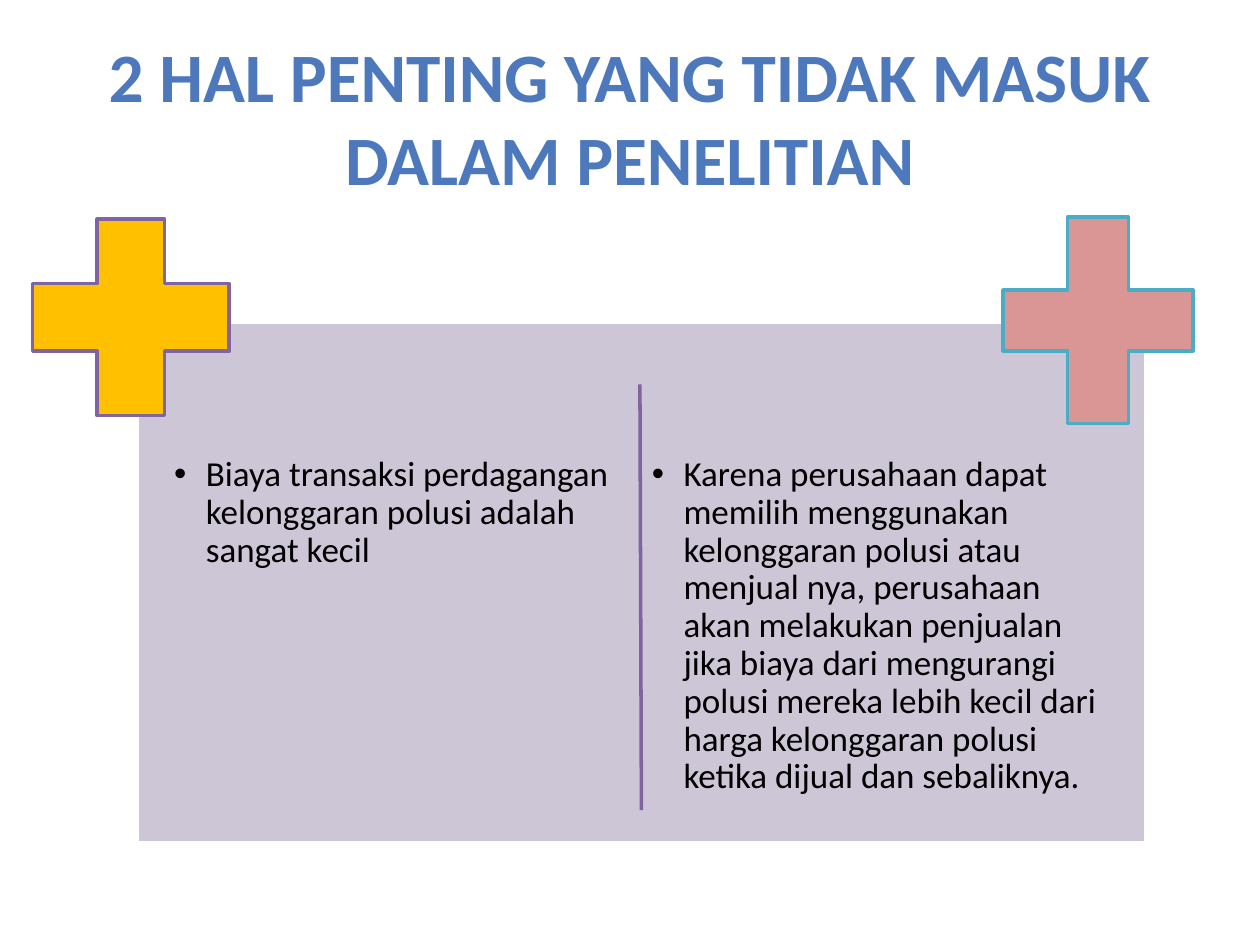
from lxml.etree import SubElement as Sub
from pptx import Presentation
from pptx.dml.color import RGBColor
from pptx.enum.shapes import MSO_CONNECTOR as Link, MSO_SHAPE as Shape
from pptx.enum.text import MSO_ANCHOR as Anchor, PP_ALIGN as Align
from pptx.oxml.ns import qn
from pptx.util import Cm, Pt

BLUE = RGBColor(0x4D, 0x79, 0xBC)
LILAC = RGBColor(0xCD, 0xC6, 0xD7)
PURPLE = RGBColor(0x80, 0x64, 0xA2)
GOLD = RGBColor(0xFF, 0xC0, 0x00)
ROSE = RGBColor(0xD9, 0x96, 0x94)
TEAL = RGBColor(0x4B, 0xAC, 0xC6)
WHITE = RGBColor(0xFF, 0xFF, 0xFF)
BLACK = RGBColor(0, 0, 0)

deck = Presentation()
deck.slide_width, deck.slide_height = Cm(25.4), Cm(19.05)
slide = deck.slides.add_slide(deck.slide_layouts[6])


def add_text(text, at, size, color, bold=False, align=Align.LEFT,
             anchor=Anchor.TOP, pad=(0.25, 0.13), space=1.0, bullet=False):
    frame = slide.shapes.add_textbox(*map(Cm, at)).text_frame
    frame.word_wrap = True
    frame.vertical_anchor = anchor
    side, top = pad
    frame.margin_left = frame.margin_right = Cm(side)
    frame.margin_top, frame.margin_bottom = Cm(top), Cm(0.13)
    para = frame.paragraphs[0]
    para.alignment = align
    para.line_spacing = space
    if bullet:
        props = para._p.get_or_add_pPr()
        props.set("marL", str(Cm(0.64)))
        props.set("indent", str(Cm(-0.64)))
        Sub(props, qn("a:buFont"), typeface="Arial")
        Sub(props, qn("a:buChar"), char="•")
    run = para.add_run()
    run.text = text
    font = run.font
    font.name, font.size, font.bold = "Calibri", Pt(size), bold
    font.color.rgb = color


add_text("2 HAL PENTING YANG TIDAK MASUK DALAM PENELITIAN",
         (1.27, 0.76, 22.86, 3.18), 39.6, BLUE, bold=True,
         align=Align.CENTER, anchor=Anchor.MIDDLE)

shapes = [
    (Shape.RECTANGLE, (2.77, 6.5, 20.32, 10.49), LILAC, WHITE),
    (Shape.CROSS, (0.66, 4.42, 3.96, 3.96), GOLD, PURPLE),
    (Shape.MATH_PLUS, (19.53, 3.63, 5.21, 5.66), ROSE, TEAL),
]
for kind, at, fill, edge in shapes:
    shape = slide.shapes.add_shape(kind, *map(Cm, at))
    shape.shadow.inherit = False
    shape.fill.solid()
    shape.fill.fore_color.rgb = fill
    shape.line.color.rgb = edge
    shape.line.width = Pt(2)
    if kind == Shape.CROSS:
        shape.adjustments[0] = 0.328

points = [
    "Biaya transaksi perdagangan kelonggaran polusi adalah sangat kecil",
    "Karena perusahaan dapat memilih menggunakan kelonggaran polusi atau "
    "menjual nya, perusahaan akan melakukan penjualan jika biaya dari "
    "mengurangi polusi mereka lebih kecil dari harga kelonggaran polusi "
    "ketika dijual dan sebaliknya.",
]
for col, point in enumerate(points):
    add_text(point, (3.38 + 9.63 * col, 7.75, 9.42, 8.99), 20, BLACK,
             pad=(0.13, 1.45), space=0.9, bullet=True)

rule = slide.shapes.add_connector(Link.STRAIGHT, Cm(12.9), Cm(7.75), Cm(12.93), Cm(16.33))
rule.line.color.rgb = PURPLE
rule.line.width = Pt(2)
Sub(rule._element.spPr, qn("a:effectLst"))

deck.save("out.pptx")
